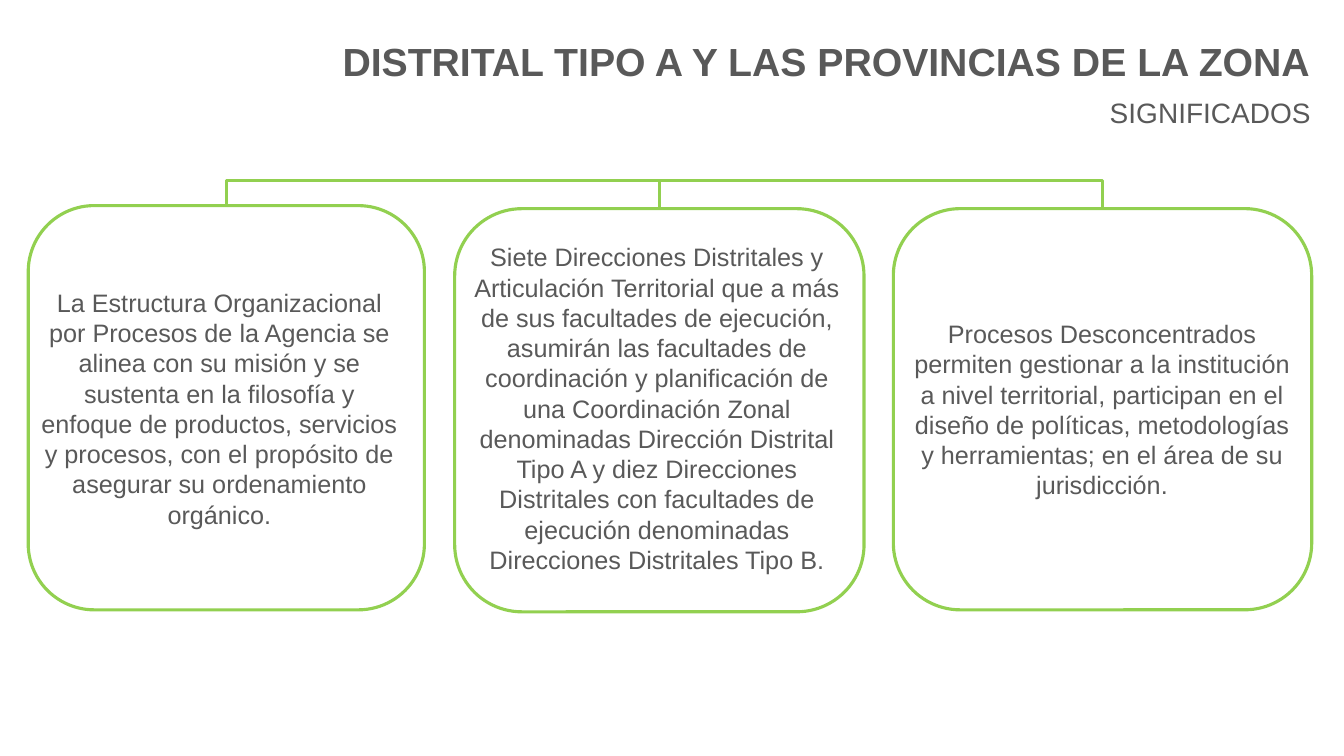
from dataclasses import dataclass

from lxml import etree
from pptx import Presentation, util as u
from pptx.dml.color import RGBColor
from pptx.enum import shapes, text
from pptx.oxml.ns import qn

# Content: every frame is (left, top, width, height) in percent of the slide
HEADINGS = [
    # wording, frame, size key, bold
    ("DISTRITAL TIPO A Y LAS PROVINCIAS DE LA ZONA",
     (16.73, 4.27, 81.47, 7.6), "title", True),
    ("SIGNIFICADOS", (68.49, 12, 29.78, 5.87), "subtitle", False),
]
CARDS = [
    # card frame, text frame, wording
    ((2.1, 27.2, 29.48, 53.47), (2.03, 37.33, 28.58, 33.6),
     "La Estructura Organizacional por Procesos de la Agencia se alinea con "
     "su misión y se sustenta en la filosofía y enfoque de productos, "
     "servicios y procesos, con el propósito de asegurar su ordenamiento "
     "orgánico."),
    ((33.83, 27.6, 30.46, 53.33), (34.51, 31.33, 28.73, 45.73),
     "Siete Direcciones Distritales y Articulación Territorial que a más de "
     "sus facultades de ejecución, asumirán las facultades de coordinación y "
     "planificación de una Coordinación Zonal denominadas Dirección Distrital "
     "Tipo A y diez Direcciones Distritales con facultades de ejecución "
     "denominadas Direcciones Distritales Tipo B."),
    ((66.47, 27.6, 31.13, 53.07), (67.14, 41.47, 29.71, 25.6),
     "Procesos Desconcentrados permiten gestionar a la institución a nivel "
     "territorial, participan en el diseño de políticas, metodologías y "
     "herramientas; en el área de su jurisdicción."),
]
BRACKET_TOP = 23.87


@dataclass(frozen=True)
class Theme:
    font = "Arial"
    ink = RGBColor.from_string("595959")
    green = RGBColor.from_string("92D050")
    stroke = u.Pt(2.25)
    sizes = {"title": u.Pt(28), "subtitle": u.Pt(20), "body": u.Pt(18)}


THEME = Theme()

deck = Presentation()
deck.slide_width, deck.slide_height = u.Inches(13.33), u.Inches(7.5)
slide = deck.slides.add_slide(deck.slide_layouts[6])


def across(share):
    return round(deck.slide_width * share / 100)


def down(share):
    return round(deck.slide_height * share / 100)


def place(frame):
    left, top, width, height = frame
    return across(left), down(top), across(width), down(height)


def draw_outline(part):
    part.line.color.rgb = THEME.green
    part.line.width = THEME.stroke


def write(wording, frame, size, align, bold=False):
    box = slide.shapes.add_textbox(*place(frame)).text_frame
    box.word_wrap = True
    box.auto_size = text.MSO_AUTO_SIZE.SHAPE_TO_FIT_TEXT
    paragraph = box.paragraphs[0]
    paragraph.text = wording
    paragraph.alignment = align
    font = paragraph.font
    font.name, font.size, font.bold = THEME.font, THEME.sizes[size], bold
    font.color.rgb = THEME.ink


# Headings
for wording, frame, size, bold in HEADINGS:
    write(wording, frame, size, text.PP_ALIGN.RIGHT, bold)

# Cards, each with its text; the bracket meets the middle of each top edge
joints = []
for card_frame, text_frame, wording in CARDS:
    card = slide.shapes.add_shape(
        shapes.MSO_SHAPE.ROUNDED_RECTANGLE, *place(card_frame))
    card.shadow.inherit = False
    card.fill.background()
    draw_outline(card)
    write(wording, text_frame, "body", text.PP_ALIGN.CENTER)
    joints.append((card.left + card.width // 2, card.top))

# Bracket joining the outer cards
first, middle, last = joints
bracket_y = down(BRACKET_TOP)
outline = slide.shapes.build_freeform(*first)
outline.add_line_segments(
    [(first[0], bracket_y), (last[0], bracket_y), last], close=False)
bracket = outline.convert_to_shape()
bracket.shadow.inherit = False
bracket.fill.background()
draw_outline(bracket)

# Stem down to the middle card
stem = slide.shapes.add_connector(
    shapes.MSO_CONNECTOR.STRAIGHT, middle[0], bracket_y, *middle)
draw_outline(stem)
etree.SubElement(stem._element.spPr, qn("a:effectLst"))

deck.save("out.pptx")
